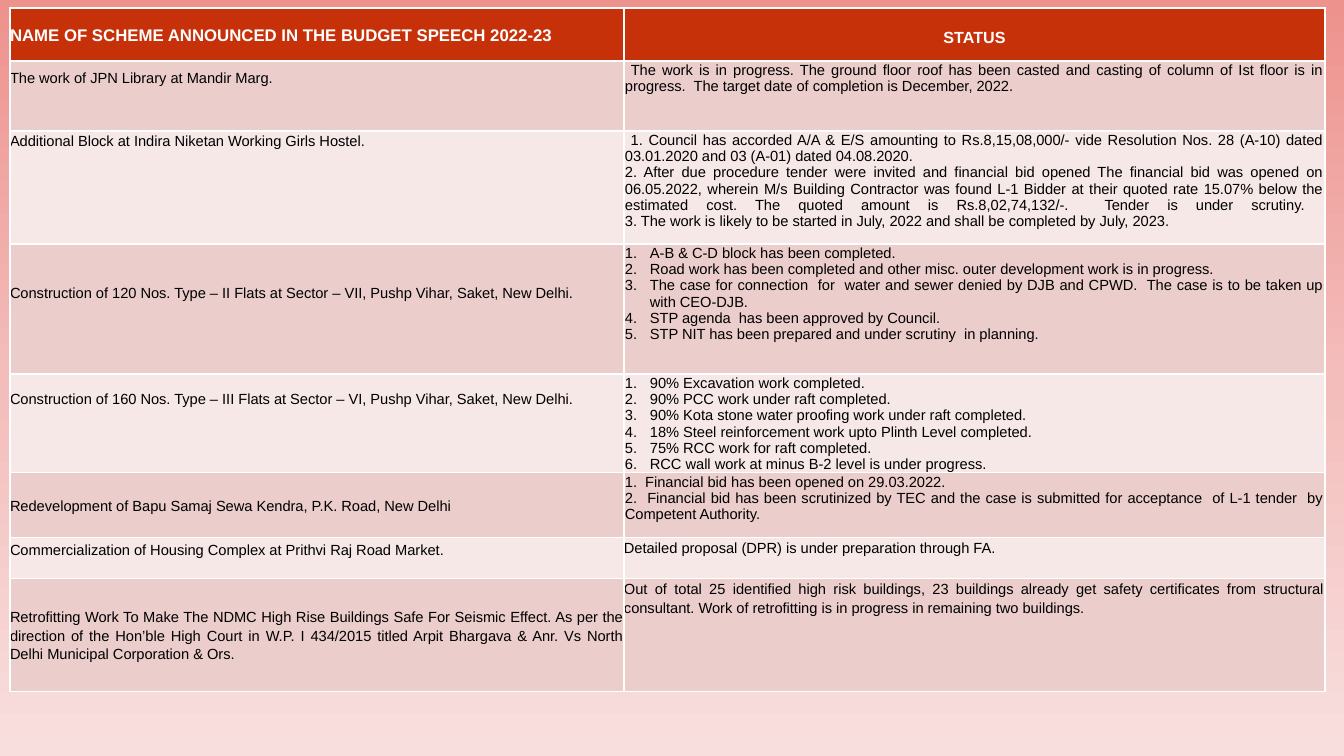
from copy import deepcopy
from dataclasses import dataclass

from lxml.etree import SubElement
from pptx import Presentation
from pptx.dml.color import RGBColor
from pptx.enum.text import MSO_ANCHOR, PP_ALIGN
from pptx.oxml.ns import qn
from pptx.util import Emu, Pt

LEFT, JUST, MID = PP_ALIGN.LEFT, PP_ALIGN.JUSTIFY, PP_ALIGN.CENTER


@dataclass
class Cell:
    lines: list
    top: int = 1
    align: PP_ALIGN = JUST
    space: float = 1.0
    side: int = 0
    listed: bool = False


# One entry per table row: height, scheme, status
ROWS = [
    (53, Cell(["NAME OF SCHEME ANNOUNCED IN THE BUDGET SPEECH 2022-23"], 15, space=1.15),
     Cell(["STATUS"], 18, MID, 1.15)),
    (70, Cell(["The work of JPN Library at Mandir Marg."], 7, space=1.15),
     Cell([" The work is in progress. The ground floor roof has been casted and casting of "
           "column of Ist floor is in progress.  The target date of completion is December, 2022."],
          side=1)),
    (113, Cell(["Additional Block at Indira Niketan Working Girls Hostel."], 0, space=1.15),
     Cell([" 1. Council has accorded A/A & E/S amounting to Rs.8,15,08,000/- vide Resolution "
           "Nos. 28 (A-10) dated 03.01.2020 and 03 (A-01) dated 04.08.2020.",
           "2. After due procedure tender were invited and financial bid opened The financial bid "
           "was opened on 06.05.2022, wherein M/s Building Contractor was found L-1 Bidder at "
           "their quoted rate 15.07% below the estimated cost. The quoted amount is "
           "Rs.8,02,74,132/-.  Tender is under scrutiny. \n"
           "3. The work is likely to be started in July, 2022 and shall be completed by July, 2023."],
          side=1)),
    (130, Cell(["Construction of 120 Nos. Type – II Flats at Sector – VII, Pushp Vihar, Saket, "
                "New Delhi."], 41, LEFT),
     Cell(["A-B & C-D block has been completed.",
           "Road work has been completed and other misc. outer development work is in progress.",
           "The case for connection  for  water and sewer denied by DJB and CPWD.  The case is "
           "to be taken up with CEO-DJB.",
           "STP agenda  has been approved by Council.",
           "STP NIT has been prepared and under scrutiny  in planning."],
          side=1, listed=True)),
    (99, Cell(["Construction of 160 Nos. Type – III Flats at Sector – VI, Pushp Vihar, Saket, "
               "New Delhi."], 17),
     Cell(["90% Excavation work completed.",
           "90% PCC work under raft completed.",
           "90% Kota stone water proofing work under raft completed.",
           "18% Steel reinforcement work upto Plinth Level completed.",
           "75% RCC work for raft completed.",
           "RCC wall work at minus B-2 level is under progress."],
          align=LEFT, side=1, listed=True)),
    (65, Cell(["Redevelopment of Bapu Samaj Sewa Kendra, P.K. Road, New Delhi"], 25),
     Cell(["1.  Financial bid has been opened on 29.03.2022.",
           "2.  Financial bid has been scrutinized by TEC and the case is submitted for "
           "acceptance  of L-1 tender  by Competent Authority."], side=1)),
    (41, Cell(["Commercialization of Housing Complex at Prithvi Raj Road Market."], 2, space=1.15),
     Cell(["Detailed proposal (DPR) is under preparation through FA."], 0, space=1.15)),
    (113, Cell(["Retrofitting Work To Make The NDMC High Rise Buildings Safe For Seismic Effect. "
                "As per the direction of the Hon’ble High Court in W.P. I 434/2015 titled Arpit "
                "Bhargava & Anr. Vs North Delhi Municipal Corporation & Ors."], 28, space=1.15),
     Cell(["Out of total 25 identified high risk buildings, 23 buildings already get safety "
           "certificates from structural consultant. Work of retrofitting is in progress in "
           "remaining two buildings."], 0, space=1.15)),
]
COLS = [614, 701]
LEFT_X, TOP_Y = 10, 8
INDENT = 25


@dataclass
class Theme:
    font: str = "Arial"
    body: float = 10.5
    heads: tuple = (12, 11.5)
    ink: str = "000000"
    white: str = "FFFFFF"
    head: str = "C73109"
    bands: tuple = ("F5E8E7", "EBCECC")
    sky: tuple = ((0, "EE928D"), (0.5, "F3BDBB"), (1, "F8DFDE"))
    rule: int = 1


THEME = Theme()


def px(n):
    return Emu(round(n * 914400 / 100.8))


def rgb(code):
    return RGBColor.from_string(code)


def paint_sky(slide):
    fill = slide.background.fill
    fill.gradient()
    fill.gradient_angle = 270
    stops = slide.element.find(".//" + qn("a:gsLst"))
    stops.insert(1, deepcopy(stops[0]))
    for stop, (pos, code) in zip(fill.gradient_stops, THEME.sky):
        stop.position = pos
        stop.color.rgb = rgb(code)


def add_rules(cell):
    props = cell._tc.get_or_add_tcPr()
    for edge in ("lnL", "lnR", "lnT", "lnB"):
        line = SubElement(props, qn("a:" + edge), w=str(Pt(THEME.rule)))
        solid = SubElement(line, qn("a:solidFill"))
        SubElement(solid, qn("a:srgbClr"), val=THEME.white)


def add_number(para):
    props = para._p.get_or_add_pPr()
    props.set("marL", str(px(INDENT)))
    props.set("indent", str(-px(INDENT)))
    SubElement(props, qn("a:buFont"), typeface="+mj-lt")
    SubElement(props, qn("a:buAutoNum"), type="arabicPeriod")


def fill_cell(cell, item, row, col):
    is_head = row == 0
    add_rules(cell)
    cell.fill.solid()
    cell.fill.fore_color.rgb = rgb(THEME.head if is_head else THEME.bands[row % 2])
    cell.margin_left = cell.margin_right = px(item.side)
    cell.margin_top, cell.margin_bottom = px(item.top), 0
    cell.vertical_anchor = MSO_ANCHOR.TOP
    frame = cell.text_frame
    for num, line in enumerate(item.lines):
        para = frame.add_paragraph() if num else frame.paragraphs[0]
        para.text = line
        para.alignment = item.align
        if item.listed:
            add_number(para)
        para.line_spacing = item.space
        font = para.font
        font.name = THEME.font
        font.size = Pt(THEME.heads[col] if is_head else THEME.body)
        font.bold = is_head
        font.color.rgb = rgb(THEME.white if is_head else THEME.ink)


def main():
    deck = Presentation()
    deck.slide_width, deck.slide_height = px(1344), px(756)
    slide = deck.slides.add_slide(deck.slide_layouts[6])
    paint_sky(slide)
    high = sum(row[0] for row in ROWS)
    table = slide.shapes.add_table(len(ROWS), len(COLS), px(LEFT_X), px(TOP_Y),
                                   px(sum(COLS)), px(high)).table
    table.horz_banding = False
    for col, wide in enumerate(COLS):
        table.columns[col].width = px(wide)
    for row, (tall, *items) in enumerate(ROWS):
        table.rows[row].height = px(tall)
        for col, item in enumerate(items):
            fill_cell(table.cell(row, col), item, row, col)
    deck.save("out.pptx")


if __name__ == "__main__":
    main()
